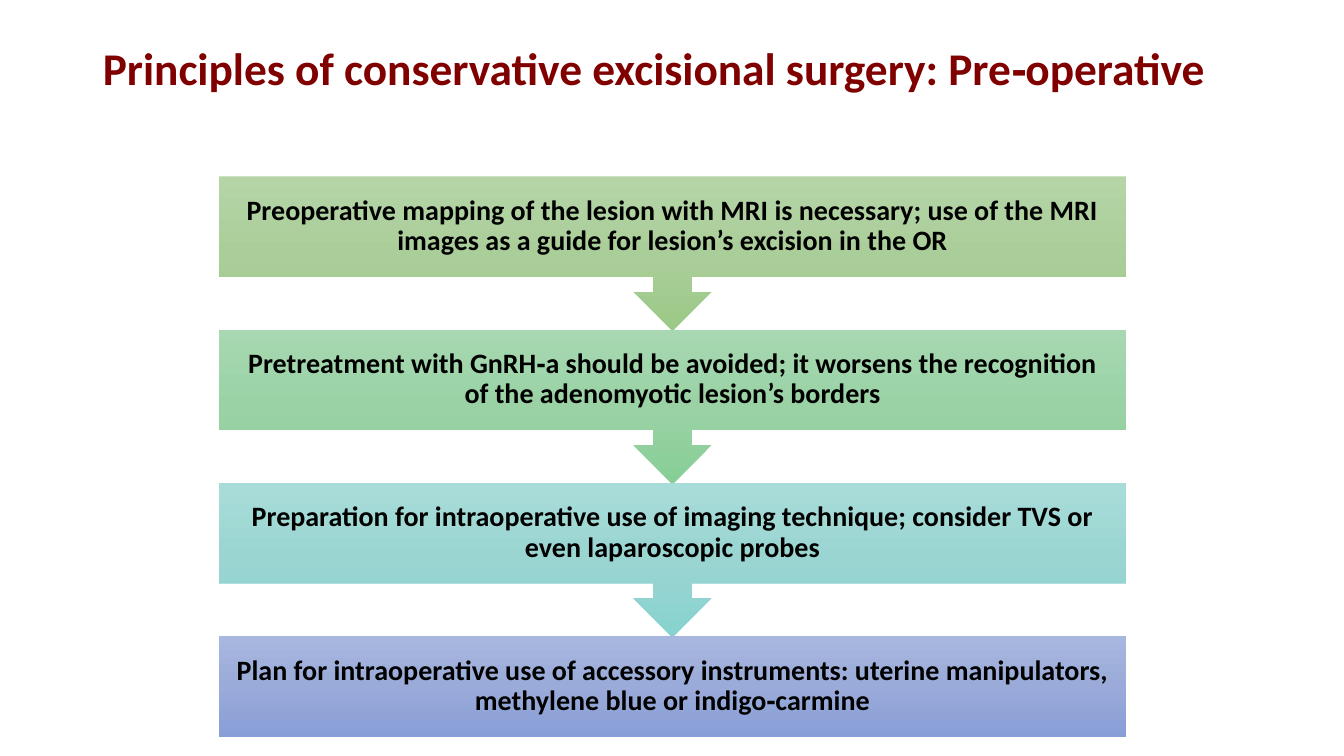
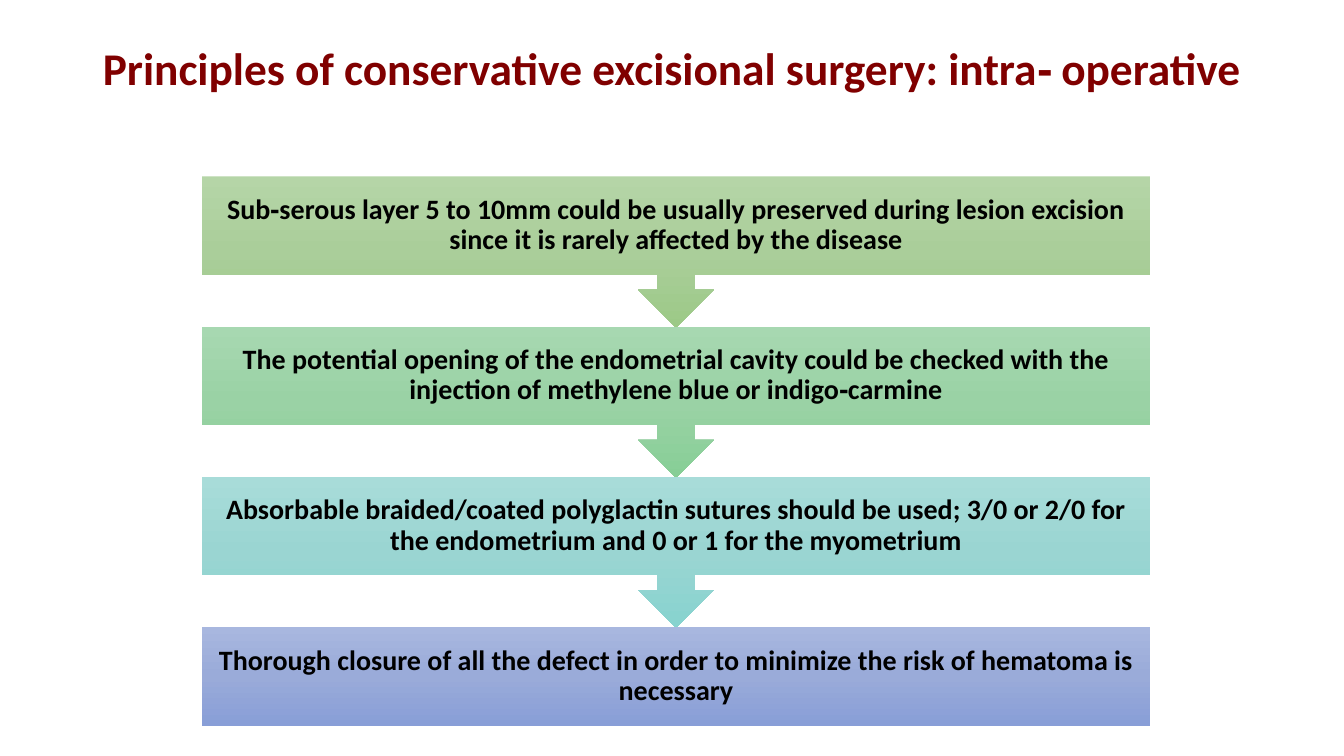
from copy import deepcopy

from pptx import Presentation
from pptx.dml.color import RGBColor
from pptx.enum.shapes import MSO_SHAPE as Preset
from pptx.enum.text import MSO_ANCHOR as Anchor, MSO_AUTO_SIZE as AutoSize, PP_ALIGN as Align
from pptx.oxml.ns import qn
from pptx.util import Inches, Pt

MAROON = RGBColor(0x80, 0x00, 0x00)
BLACK = RGBColor(0x00, 0x00, 0x00)
GREEN = [RGBColor(0xB5, 0xD5, 0xA7), RGBColor(0xAA, 0xCE, 0x9A), RGBColor(0x9C, 0xC9, 0x87)]
MINT = [RGBColor(0xA7, 0xD8, 0xB1), RGBColor(0x9A, 0xD2, 0xA5), RGBColor(0x87, 0xCE, 0x96)]
TEAL = [RGBColor(0xA8, 0xDC, 0xD9), RGBColor(0x9A, 0xD5, 0xD2), RGBColor(0x87, 0xD3, 0xCF)]
BLUE = [RGBColor(0xA8, 0xB7, 0xDF), RGBColor(0x9A, 0xAB, 0xD9), RGBColor(0x88, 0x9E, 0xD7)]
STEP_COLOURS = [GREEN, MINT, TEAL, BLUE]

FLOW_TOP = 1.75
OVERLAP = 0.01

SLIDES = [
    {
        "title": "Principles of conservative excisional surgery: Pre‐operative",
        "flow": {"left": 2.17, "width": 9, "pitch": 1.52, "last_height": 1},
        "steps": [
            "Preoperative mapping of the lesion with MRI is necessary; use of the MRI "
            "images as a guide for lesion’s excision in the OR",
            "Pretreatment with GnRH‐a should be avoided; it worsens the recognition "
            "of the adenomyotic lesion’s borders",
            "Preparation for intraoperative use of imaging technique; consider TVS or "
            "even laparoscopic probes",
            "Plan for intraoperative use of accessory instruments: uterine manipulators, "
            "methylene blue or indigo‐carmine",
        ],
    },
    {
        "title": "Principles of conservative excisional surgery: intra‐ operative",
        "flow": {"left": 2, "width": 9.41, "pitch": 1.49, "last_height": 0.98},
        "steps": [
            "Sub‐serous layer 5 to 10mm could be usually preserved during lesion excision "
            "since it is rarely affected by the disease",
            "The potential opening of the endometrial cavity could be checked with the "
            "injection of methylene blue or indigo‐carmine",
            "Absorbable braided/coated polyglactin sutures should be used; 3/0 or 2/0 for "
            "the endometrium and 0 or 1 for the myometrium",
            "Thorough closure of all the defect in order to minimize the risk of hematoma is "
            "necessary",
        ],
    },
]


def apply(target, values):
    for name, value in values.items():
        setattr(target, name, value)


class Deck:
    """Holds the shared style and the slide being built."""

    title_font = {"name": "Calibri", "size": Pt(32.4), "bold": True}
    step_font = {"name": "Calibri", "size": Pt(20), "bold": True}
    title_place = {"left": Inches(0.92), "top": Inches(0.4),
                   "width": Inches(11.7), "height": Inches(0.6)}
    frame = {"word_wrap": True, "auto_size": AutoSize.NONE, "vertical_anchor": Anchor.MIDDLE}
    step_margins = {f"margin_{side}": Inches(0.16) for side in ("left", "top", "right", "bottom")}

    def __init__(self):
        self.presentation = Presentation()
        apply(self.presentation, {"slide_width": Inches(13.33), "slide_height": Inches(7.5)})
        self.slide = None

    def add_slide(self, title):
        self.slide = self.presentation.slides.add_slide(self.presentation.slide_layouts[5])
        shape = self.slide.shapes.title
        apply(shape, self.title_place)
        self.set_text(shape, title, self.title_font, MAROON, Align.LEFT)

    def set_text(self, shape, text, font, colour, alignment):
        shape.text_frame.text = text
        apply(shape.text_frame, self.frame)
        paragraph = shape.text_frame.paragraphs[0]
        apply(paragraph, {"alignment": alignment, "line_spacing": 0.9})
        apply(paragraph.font, font)
        paragraph.font.color.rgb = colour

    def fill_gradient(self, shape, colours):
        shape.fill.gradient()
        shape.fill.gradient_angle = 270
        stop_list = next(shape._element.spPr.iter(qn("a:gsLst")))
        stop_list.insert(1, deepcopy(stop_list[0]))
        for index, (stop, colour) in enumerate(zip(shape.fill.gradient_stops, colours)):
            stop.position = index / 2
            stop.color.rgb = colour

    def add_step(self, preset, left, top, width, height, text, colours):
        shape = self.slide.shapes.add_shape(
            preset, Inches(left), Inches(top), Inches(width), Inches(height))
        shape.shadow.inherit = False
        shape.line.fill.background()
        self.fill_gradient(shape, colours)
        self.set_text(shape, text, self.step_font, BLACK, Align.CENTER)
        apply(shape.text_frame, self.step_margins)

    def add_flow(self, steps, left, width, pitch, last_height):
        for index, (text, colours) in enumerate(zip(steps, STEP_COLOURS)):
            is_last = index == len(steps) - 1
            preset = Preset.RECTANGLE if is_last else Preset.DOWN_ARROW_CALLOUT
            height = last_height if is_last else pitch + OVERLAP
            self.add_step(preset, left, FLOW_TOP + index * pitch, width, height, text, colours)


def main():
    deck = Deck()
    for content in SLIDES:
        deck.add_slide(content["title"])
        deck.add_flow(content["steps"], **content["flow"])
    deck.presentation.save("out.pptx")


if __name__ == "__main__":
    main()
